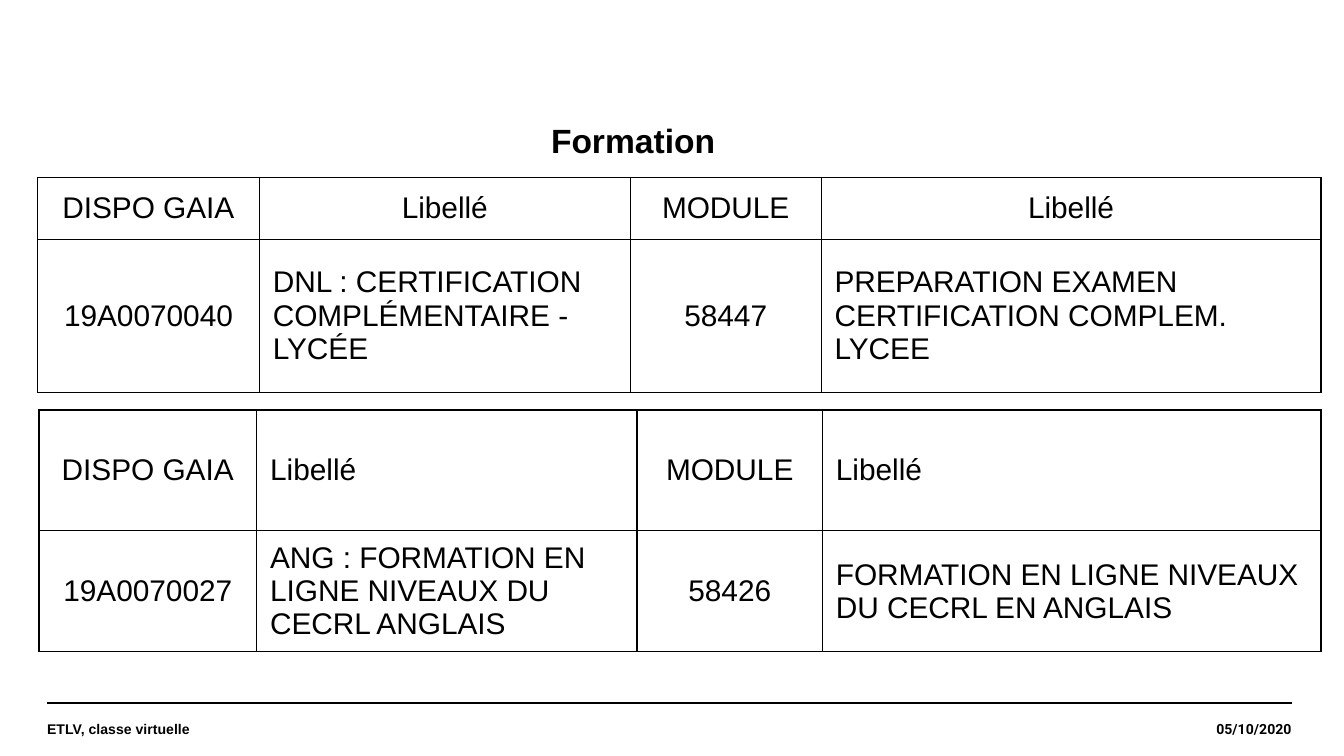
from lxml.etree import SubElement
from pptx import Presentation
from pptx.dml.color import RGBColor
from pptx.enum.shapes import MSO_CONNECTOR
from pptx.enum.text import MSO_ANCHOR, PP_ALIGN
from pptx.oxml.ns import qn
from pptx.util import Inches, Pt

# Content
TITLE = "Formation"
FOOTER = "ETLV, classe virtuelle"
DATE = "05/10/2020"
HEADINGS = ["DISPO GAIA", "Libellé", "MODULE", "Libellé"]
CENTER, LEFT, RIGHT = PP_ALIGN.CENTER, PP_ALIGN.LEFT, PP_ALIGN.RIGHT
BODY_ALIGN = [CENTER, LEFT, CENTER, LEFT]
TABLES = [
    {
        "box": (0.28, 1.32, 9.55, 1.6),
        "columns": [1.65, 2.76, 1.42, 3.72],
        "rows": [0.46, 1.14],
        "heading_align": [CENTER] * 4,
        "body": ["19A0070040", "DNL : CERTIFICATION COMPLÉMENTAIRE - LYCÉE",
                 "58447", "PREPARATION EXAMEN CERTIFICATION COMPLEM. LYCEE"],
    },
    {
        "box": (0.29, 3.05, 9.54, 1.8),
        "columns": [1.62, 2.83, 1.38, 3.71],
        "rows": [0.9, 0.18],  # the second row grows to fit its text
        "heading_align": BODY_ALIGN,
        "body": ["19A0070027", "ANG : FORMATION EN LIGNE NIVEAUX DU CECRL ANGLAIS",
                 "58426", "FORMATION EN LIGNE NIVEAUX DU CECRL EN ANGLAIS"],
    },
]

# Theme and footer geometry
THEME = {
    "ink": "000000",
    "border": 0.75,
    "rule": 0.8,
    "title": {"name": "Arial", "size": Pt(18), "bold": True},
    "cell": {"name": "Arial", "size": Pt(16), "bold": False},
    "footer": {"name": "Arial", "size": Pt(7.5), "bold": True},
    "date": {"name": "Roboto", "size": Pt(7.5), "bold": True},
}
INK = RGBColor.from_string(THEME["ink"])
FOOTER_LEFT, FOOTER_RIGHT, FOOTER_TOP, FOOTER_HEIGHT = 0.35, 9.61, 5.23, 0.39


def write(frame, text, style, align=LEFT):
    frame.text = text
    paragraph = frame.paragraphs[0]
    paragraph.alignment = align
    font = paragraph.runs[0].font
    for name, value in THEME[style].items():
        setattr(font, name, value)
    font.color.rgb = INK


def add_borders(cell):
    properties = cell._tc.get_or_add_tcPr()
    for side in ("lnL", "lnR", "lnT", "lnB"):
        line = SubElement(properties, qn(f"a:{side}"), w=str(Pt(THEME["border"])))
        fill = SubElement(line, qn("a:solidFill"))
        SubElement(fill, qn("a:srgbClr"), val=THEME["ink"])


def add_course_table(slide, data):
    columns, rows = data["columns"], data["rows"]
    box = [Inches(length) for length in data["box"]]
    shape = slide.shapes.add_table(len(rows), len(columns), *box)
    table = shape.table
    table.first_row = table.horz_banding = False
    for column, width in zip(table.columns, columns):
        column.width = Inches(width)
    contents = [(HEADINGS, data["heading_align"]), (data["body"], BODY_ALIGN)]
    for row, height, (texts, aligns) in zip(table.rows, rows, contents):
        row.height = Inches(height)
        for cell, text, align in zip(row.cells, texts, aligns):
            write(cell.text_frame, text, "cell", align)
            cell.vertical_anchor = MSO_ANCHOR.MIDDLE
            add_borders(cell)
            cell.fill.background()
    shape.width, shape.height = box[2:]


def add_footer_text(slide, left, width, text, style, align):
    box = map(Inches, (left, FOOTER_TOP, width, FOOTER_HEIGHT))
    frame = slide.shapes.add_textbox(*box).text_frame
    frame.margin_left = frame.margin_right = frame.margin_top = frame.margin_bottom = 0
    frame.word_wrap = True
    frame.vertical_anchor = MSO_ANCHOR.MIDDLE
    write(frame, text, style, align)


def main():
    presentation = Presentation()
    presentation.slide_width = Inches(10)
    presentation.slide_height = presentation.slide_width * 9 // 16
    slide = presentation.slides.add_slide(presentation.slide_layouts[5])

    # Footer rule, date and label
    rule = slide.shapes.add_connector(
        MSO_CONNECTOR.STRAIGHT,
        *map(Inches, (FOOTER_LEFT, FOOTER_TOP, FOOTER_RIGHT, FOOTER_TOP)))
    rule.line.color.rgb = INK
    rule.line.width = Pt(THEME["rule"])
    SubElement(rule._element.spPr, qn("a:effectLst"))
    date_width = 1.28
    add_footer_text(slide, FOOTER_RIGHT - date_width, date_width, DATE, "date", RIGHT)
    add_footer_text(slide, FOOTER_LEFT, 6.38, FOOTER, "footer", LEFT)

    # Course tables
    for data in TABLES:
        add_course_table(slide, data)

    # Title
    title = slide.shapes.title
    title.left, title.top, title.width, title.height = map(Inches, (4, 0.84, 1.44, 0.4))
    title.text_frame.word_wrap = False
    title.text_frame.vertical_anchor = MSO_ANCHOR.TOP
    write(title.text_frame, TITLE, "title")

    presentation.save("out.pptx")


if __name__ == "__main__":
    main()
